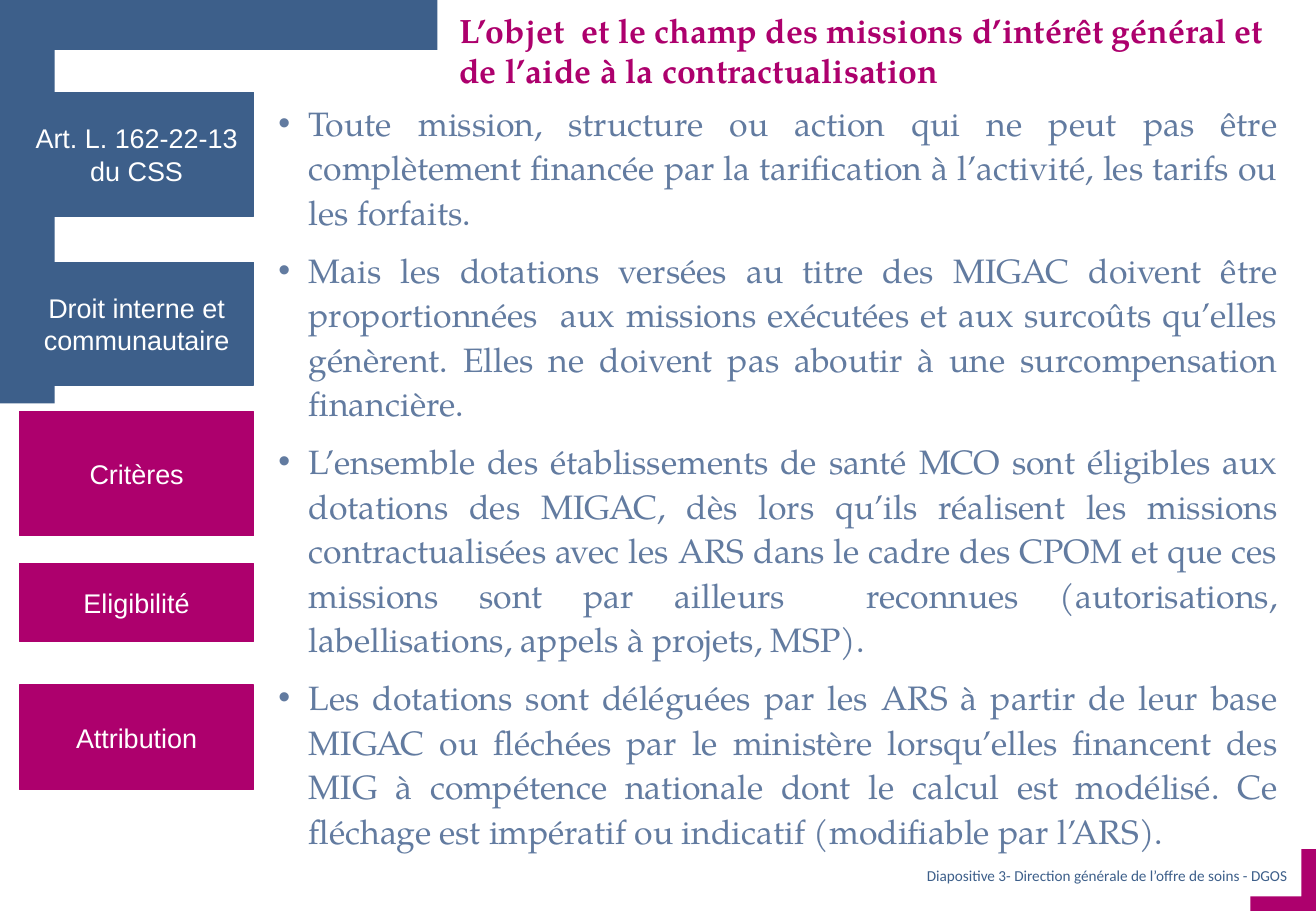
from dataclasses import dataclass

import lxml.etree
import pptx
import pptx.dml.color
import pptx.enum.shapes
import pptx.enum.text
import pptx.oxml.ns
import pptx.util

Color = pptx.dml.color.RGBColor
Align = pptx.enum.text.PP_ALIGN
Anchor = pptx.enum.text.MSO_ANCHOR
Points = pptx.util.Pt

CELL = pptx.util.Inches(0.1)
COLUMNS, ROWS = 108.3, 75


@dataclass(frozen=True)
class Theme:
    blue: Color = Color(0x3D, 0x5F, 0x8A)
    pink: Color = Color(0xAD, 0x00, 0x6D)
    slate: Color = Color(0x62, 0x7B, 0xA0)
    white: Color = Color(0xFF, 0xFF, 0xFF)
    serif: str = "TeX Gyre Pagella"
    label: str = "Arial"
    footer: str = "Calibri"
    text_size: int = 20
    label_size: int = 16
    footer_size: int = 9


@dataclass(frozen=True)
class Area:
    column: float
    row: float
    columns: float
    rows: float


@dataclass(frozen=True)
class Tag:
    text: str
    row: float
    rows: float
    color: Color


THEME = Theme()

TAGS = [
    Tag("Art. L. 162-22-13 du CSS", 7.6, 10.2, THEME.blue),
    Tag("Droit interne et communautaire", 21.6, 10.1, THEME.blue),
    Tag("Critères", 33.9, 10.2, THEME.pink),
    Tag("Eligibilité", 46.4, 6.4, THEME.pink),
    Tag("Attribution", 56.4, 8.6, THEME.pink),
]

TITLE = "L’objet  et le champ des missions d’intérêt général et de l’aide à la contractualisation"
FOOTER = "Diapositive 3- Direction générale de l’offre de soins - DGOS"
POINTS = [
    "Toute mission, structure ou action qui ne peut pas être complètement financée par la "
    "tarification à l’activité, les tarifs ou les forfaits.",
    "Mais les dotations versées au titre des MIGAC doivent être proportionnées  aux missions "
    "exécutées et aux surcoûts qu’elles génèrent. Elles ne doivent pas aboutir à une "
    "surcompensation financière.",
    "L’ensemble des établissements de santé MCO sont éligibles aux dotations des MIGAC, dès lors "
    "qu’ils réalisent les missions contractualisées avec les ARS dans le cadre des CPOM et que ces "
    "missions sont par ailleurs  reconnues (autorisations, labellisations, appels à projets, MSP).",
    "Les dotations sont déléguées par les ARS à partir de leur base MIGAC ou fléchées par le "
    "ministère lorsqu’elles financent des MIG à compétence nationale dont le calcul est modélisé. "
    "Ce fléchage est impératif ou indicatif (modifiable par l’ARS).",
]


def cells(count: float) -> int:
    return round(count * CELL)


def place(shape, area: Area) -> None:
    shape.left, shape.top = cells(area.column), cells(area.row)
    shape.width, shape.height = cells(area.columns), cells(area.rows)


def write(shape, text: str, family: str, size: int, color: Color, align: Align,
          anchor: Anchor = Anchor.TOP, bold: bool = False) -> None:
    frame = shape.text_frame
    frame.text = text
    frame.word_wrap = True
    frame.auto_size = pptx.enum.text.MSO_AUTO_SIZE.NONE
    frame.vertical_anchor = anchor
    for para in frame.paragraphs:
        para.alignment = align
        para.space_before = Points(0)
        for span in para.runs:
            span.font.name = family
            span.font.size = Points(size)
            span.font.bold = bold
            span.font.color.rgb = color


def add_bullet(para) -> None:
    properties = para._p.get_or_add_pPr()
    indent = pptx.util.Inches(0.25)
    properties.set("marL", str(indent))
    properties.set("indent", str(-indent))
    bullet = lxml.etree.SubElement(properties, pptx.oxml.ns.qn("a:buChar"))
    bullet.set("char", "•")


def draw_corner(page, outline: list[tuple[float, float]], color: Color) -> None:
    vertices = [(cells(column), cells(row)) for column, row in outline]
    builder = page.shapes.build_freeform(*vertices[0])
    builder.add_line_segments(vertices[1:])
    corner = builder.convert_to_shape()
    corner.shadow.inherit = False
    corner.fill.solid()
    corner.fill.fore_color.rgb = color
    corner.line.fill.background()


def draw_tag(page, tag: Tag) -> None:
    box = page.shapes.add_shape(pptx.enum.shapes.MSO_SHAPE.RECTANGLE, 0, 0, 0, 0)
    place(box, Area(1.6, tag.row, 19.3, tag.rows))
    box.shadow.inherit = False
    box.fill.solid()
    box.fill.fore_color.rgb = tag.color
    box.line.color.rgb = tag.color
    box.line.width = Points(0.75)
    write(box, tag.text, THEME.label, THEME.label_size, THEME.white, Align.CENTER, Anchor.MIDDLE)


def draw_points(body) -> None:
    place(body, Area(21.9, 7.6, 84.3, 63.7))
    write(body, "\n".join(POINTS), THEME.serif, THEME.text_size, THEME.slate, Align.JUSTIFY)
    for position, para in enumerate(body.text_frame.paragraphs):
        add_bullet(para)
        para.line_spacing = 1.1
        para.space_before = Points(0.4 * THEME.text_size if position else 0)


def draw_footer(page) -> None:
    box = page.shapes.add_textbox(0, 0, 0, 0)
    place(box, Area(69.8, 70.9, 36.8, 2.3))
    frame = box.text_frame
    frame.margin_left = frame.margin_right = cells(0.7)
    frame.margin_top = frame.margin_bottom = cells(0.4)
    write(box, FOOTER, THEME.footer, THEME.footer_size, THEME.blue, Align.RIGHT)


def main() -> None:
    deck = pptx.Presentation()
    deck.slide_width, deck.slide_height = cells(COLUMNS), cells(ROWS)
    page = deck.slides.add_slide(deck.slide_layouts[1])
    title, body = page.placeholders[0], page.placeholders[1]

    place(title, Area(36.8, 0.3, 69.3, 7.7))
    write(title, TITLE, THEME.serif, THEME.text_size, THEME.pink, Align.LEFT, bold=True)
    draw_points(body)

    draw_corner(page, [(0, 0), (36, 0), (36, 4.1), (4.5, 4.1), (4.5, 33.2), (0, 33.2)], THEME.blue)
    draw_corner(page, [(COLUMNS, ROWS), (102.9, ROWS), (102.9, 73.8), (107.1, 73.8),
                       (107.1, 69.9), (COLUMNS, 69.9)], THEME.pink)
    for tag in TAGS:
        draw_tag(page, tag)
    draw_footer(page)
    deck.save("out.pptx")


if __name__ == "__main__":
    main()
